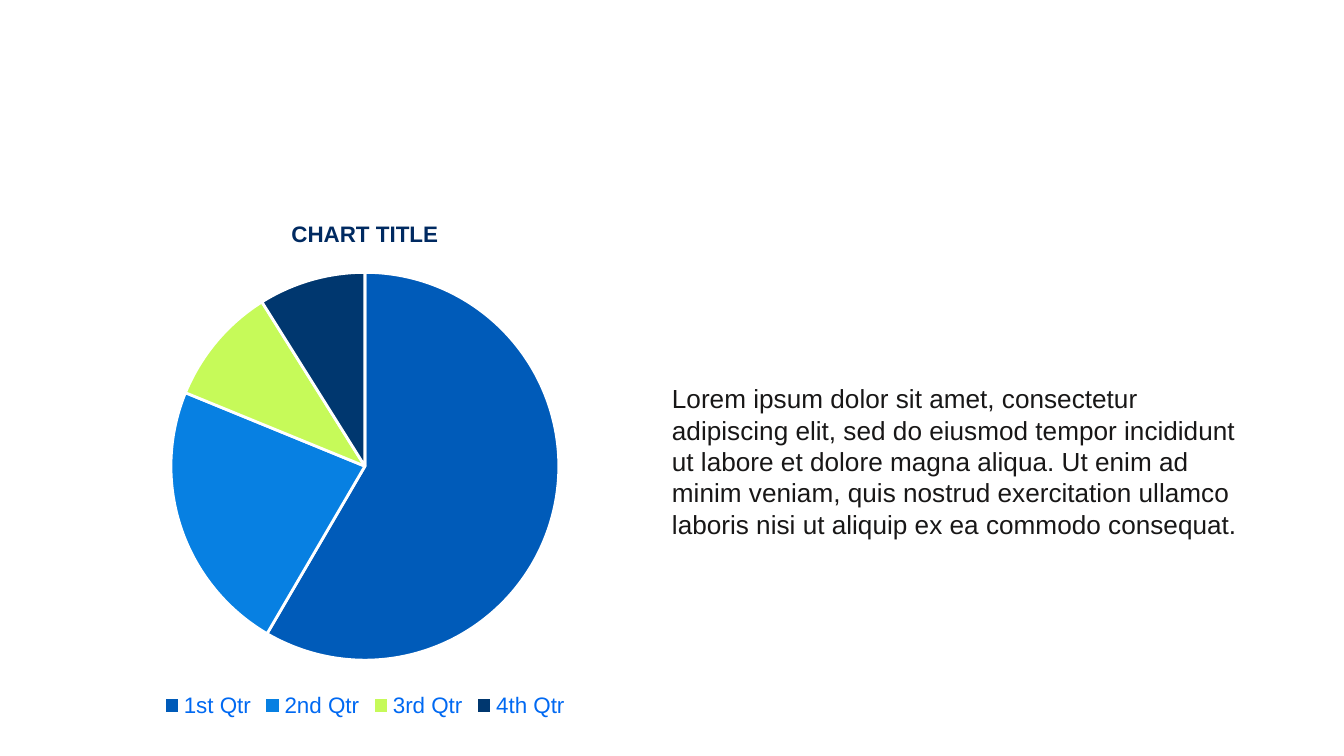
from dataclasses import dataclass
from typing import Any

from pptx import Presentation
from pptx.chart.data import CategoryChartData
from pptx.dml.color import RGBColor
from pptx.enum.chart import XL_CHART_TYPE as ChartType, XL_LEGEND_POSITION as LegendSide
from pptx.enum.text import MSO_ANCHOR as Anchor
from pptx.util import Inches, Pt


def color(value):
    return RGBColor.from_string(value)


@dataclass
class SlideStyle:
    slide: Any
    font: str = "Arial"
    ink: str = "181717"
    navy: str = "002A61"
    accent: str = "0069F2"
    paper: str = "FFFFFF"

    def set_font(self, font, size, tint, bold=False):
        font.name = self.font
        font.size = Pt(size)
        font.bold = bold
        font.color.rgb = color(tint)

    def pie(self, box, title, quarters):
        data = CategoryChartData()
        data.categories = [name for name, _, _ in quarters]
        data.add_series("Series 1", [value for _, value, _ in quarters])
        chart = self.slide.shapes.add_chart(ChartType.PIE, *map(Inches, box), data).chart
        self.set_font(chart.font, 10, self.navy)

        chart.has_title = True
        heading = chart.chart_title.text_frame
        heading.text = title
        self.set_font(heading.paragraphs[0].font, 12, self.navy, bold=True)

        chart.has_legend = True
        chart.legend.position = LegendSide.BOTTOM
        chart.legend.include_in_layout = False
        self.set_font(chart.legend.font, 12, self.accent)

        plot = chart.plots[0]
        plot.vary_by_categories = True
        for index, (_, _, tint) in enumerate(quarters):
            wedge = plot.series[0].points[index].format
            wedge.fill.solid()
            wedge.fill.fore_color.rgb = color(tint)
            wedge.line.color.rgb = color(self.paper)
            wedge.line.width = Pt(1.5)

    def text(self, box, words):
        frame = self.slide.shapes.add_textbox(*map(Inches, box)).text_frame
        frame.word_wrap = True
        frame.vertical_anchor = Anchor.MIDDLE
        frame.margin_left = frame.margin_right = frame.margin_top = frame.margin_bottom = 0
        paragraph = frame.paragraphs[0]
        paragraph.text = words
        self.set_font(paragraph.font, 14, self.ink)


def main():
    deck = Presentation()
    deck.slide_width = Inches(10)
    deck.slide_height = Inches(10 * 9 / 16)
    page = SlideStyle(deck.slides.add_slide(deck.slide_layouts[6]))

    quarters = [
        ("1st Qtr", 59, "005BB9"),
        ("2nd Qtr", 23, "0780E2"),
        ("3rd Qtr", 10, "C6FA59"),
        ("4th Qtr", 9, "00376F"),
    ]
    page.pie((0.37, 1.48, 4.69, 3.9), "CHART TITLE", quarters)
    page.text(
        (5, 2.18, 4.27, 2.5),
        "Lorem ipsum dolor sit amet, consectetur adipiscing elit, sed do eiusmod "
        "tempor incididunt ut labore et dolore magna aliqua. Ut enim ad minim veniam, "
        "quis nostrud exercitation ullamco laboris nisi ut aliquip ex ea commodo consequat.",
    )
    deck.save("out.pptx")


if __name__ == "__main__":
    main()
